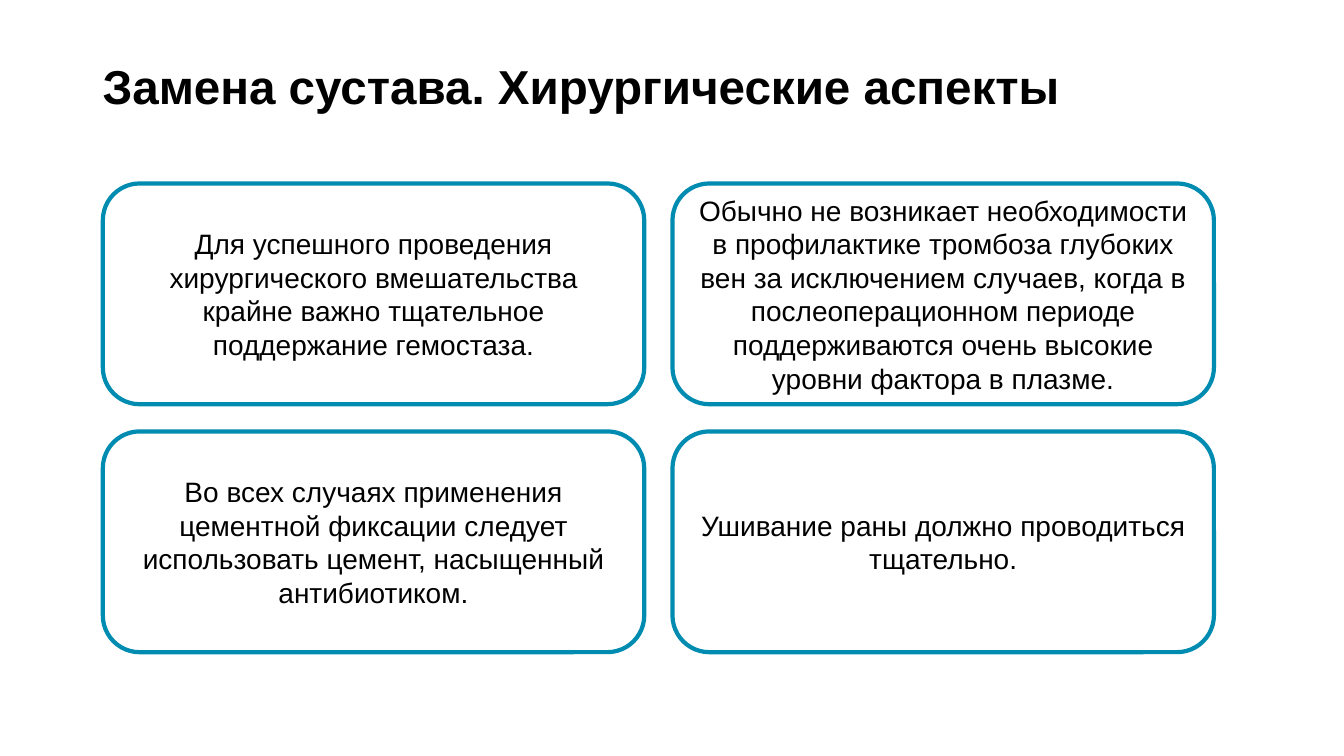
from pptx import Presentation
from pptx.dml.color import RGBColor
from pptx.enum import shapes, text
from pptx.util import Inches, Pt

BLACK = RGBColor(0x00, 0x00, 0x00)
WHITE = RGBColor(0xFF, 0xFF, 0xFF)
TEAL = RGBColor(0x00, 0x8B, 0xB0)

TITLE = "Замена сустава. Хирургические аспекты"
CARDS = [
    "Для успешного проведения хирургического вмешательства крайне важно "
    "тщательное поддержание гемостаза.",
    "Обычно не возникает необходимости в профилактике тромбоза глубоких вен "
    "за исключением случаев, когда в послеоперационном периоде "
    "поддерживаются очень высокие уровни фактора в плазме.",
    "Во всех случаях применения цементной фиксации следует использовать "
    "цемент, насыщенный антибиотиком.",
    "Ушивание раны должно проводиться тщательно.",
]
LEFT, TOP = 1.02, 1.82
CARD_W, CARD_H = 5.37, 2.19
STEP_X, STEP_Y = 5.65, 2.46


def write_text(sp, content, align, **font):
    tf = sp.text_frame
    tf.word_wrap = True
    tf.vertical_anchor = text.MSO_ANCHOR.MIDDLE
    p = tf.paragraphs[0]
    p.alignment = align
    r = p.add_run()
    r.text = content
    r.font.color.rgb = BLACK
    for name, value in {"name": "Arial", **font}.items():
        setattr(r.font, name, value)
    return tf


prs = Presentation()
prs.slide_width, prs.slide_height = Inches(13.33), Inches(7.5)
s = prs.slides.add_slide(prs.slide_layouts[6])

title = s.shapes.add_textbox(Inches(0.92), Inches(0.25), Inches(11.5), Inches(1.19))
write_text(title, TITLE, text.PP_ALIGN.LEFT, size=Pt(34), bold=True)

for i, content in enumerate(CARDS):
    row, col = divmod(i, 2)
    card = s.shapes.add_shape(
        shapes.MSO_SHAPE.ROUNDED_RECTANGLE,
        Inches(LEFT + col * STEP_X), Inches(TOP + row * STEP_Y),
        Inches(CARD_W), Inches(CARD_H))
    card.shadow.inherit = False
    card.fill.solid()
    card.fill.fore_color.rgb = WHITE
    card.line.color.rgb = TEAL
    card.line.width = Pt(3)
    tf = write_text(card, content, text.PP_ALIGN.CENTER, size=Pt(20))
    tf.paragraphs[0].space_after = Pt(7)
    for side in ("left", "top", "right", "bottom"):
        setattr(tf, f"margin_{side}", Inches(0.09))

prs.save("out.pptx")
